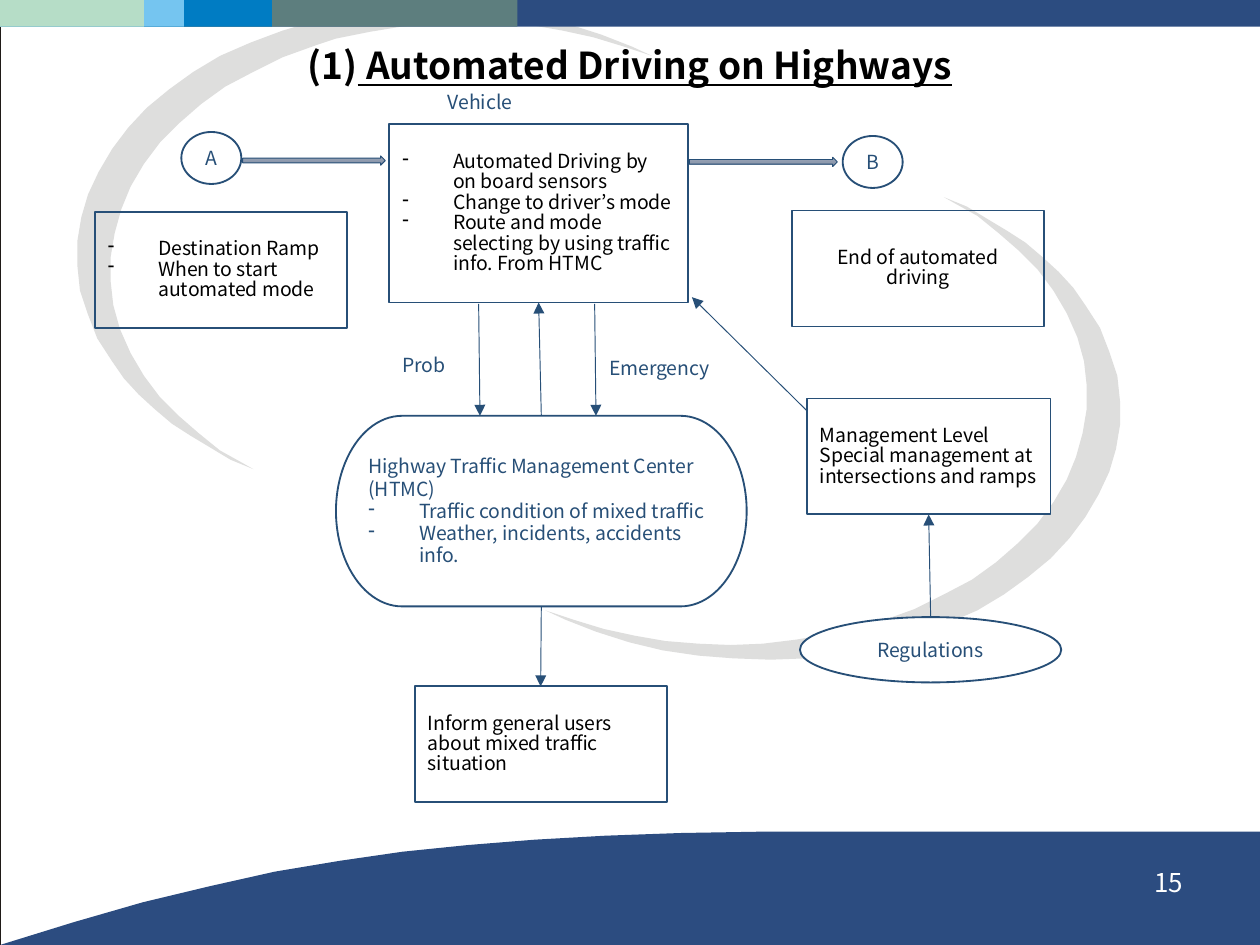
from lxml.etree import SubElement
from pptx import Presentation
from pptx.dml.color import RGBColor
from pptx.enum.shapes import MSO_CONNECTOR, MSO_SHAPE
from pptx.enum.text import MSO_ANCHOR, PP_ALIGN
from pptx.oxml.ns import qn
from pptx.util import Inches, Pt

FONT = "Noto Sans CJK JP"
NAVY, BLUE, GREY = "2C4C80", "274F77", "DEDEDD"
BLACK, WHITE = "000000", "FFFFFF"
WIDTH, HEIGHT = 9.45, 7.09

TOP_BANDS = [(9.45, NAVY), (3.88, "5D7E7E"), (2.04, "007CC3"), (1.38, "75C5F0"), (1.08, "B6DDC7")]
SWOOSH = [
    (2.12, 0.23), (2.39, 0.15), (2.66, 0.1), (2.93, 0.06), (3.2, 0.05), (3.48, 0.06),
    (3.74, 0.08), (4.01, 0.12), (4.26, 0.18), (4.51, 0.26), (4.74, 0.35), (4.89, 0.42),
    (4.68, 0.35), (4.45, 0.28), (4.22, 0.23), (3.99, 0.19), (3.74, 0.17), (3.5, 0.16),
    (3.26, 0.17), (3.01, 0.2), (2.77, 0.24), (2.52, 0.29), (2.37, 0.34), (2.12, 0.43),
    (1.9, 0.54), (1.69, 0.65), (1.51, 0.78), (1.35, 0.92), (1.2, 1.07), (1.08, 1.23),
    (0.98, 1.4), (0.91, 1.57), (0.86, 1.75), (0.83, 1.93), (0.83, 2.11), (0.85, 2.29),
    (0.9, 2.47), (0.98, 2.65), (1.08, 2.82), (1.2, 2.98), (1.34, 3.12), (1.49, 3.25),
    (1.65, 3.38), (1.83, 3.48), (1.9, 3.52), (1.73, 3.45), (1.58, 3.36), (1.43, 3.27),
    (1.29, 3.18), (1.16, 3.07), (1.04, 2.96), (0.93, 2.84), (0.84, 2.71), (0.73, 2.54),
    (0.66, 2.36), (0.6, 2.18), (0.58, 1.99), (0.58, 1.81), (0.61, 1.63), (0.66, 1.46),
    (0.74, 1.29), (0.84, 1.12), (0.96, 0.96), (1.1, 0.81), (1.27, 0.67), (1.45, 0.54),
    (1.65, 0.42), (1.88, 0.32),
]
WAVE = [
    (9.46, 0), (9.46, 0.85), (0, 0.85), (0.55, 0.68), (1.07, 0.53), (1.57, 0.41),
    (2.06, 0.3), (2.54, 0.22), (3.02, 0.15), (3.51, 0.1), (4.01, 0.06), (4.54, 0.03),
    (5.1, 0.01), (5.69, 0),
]


def color(value):
    return RGBColor.from_string(value)


def paint(shape, fill=None, line=None, line_width=1):
    shape.shadow.inherit = False
    if fill:
        shape.fill.solid()
        shape.fill.fore_color.rgb = color(fill)
    else:
        shape.fill.background()
    if line:
        shape.line.color.rgb = color(line)
        shape.line.width = Pt(line_width)
    else:
        shape.line.fill.background()


def write(paragraph, text, size=10.5, ink=BLACK, bold=False, underline=False):
    run = paragraph.add_run()
    run.text = text
    run.font.name = FONT
    run.font.size = Pt(size)
    run.font.color.rgb = color(ink)
    run.font.bold = bold
    run.font.underline = underline


def add_bullet(paragraph):
    properties = paragraph._p.get_or_add_pPr()
    properties.set("marL", str(Inches(0.38)))
    properties.set("indent", str(-Inches(0.38)))
    SubElement(properties, qn("a:buChar"), char="-")


def write_lines(shape, lines, align=PP_ALIGN.LEFT, spacing=None, bullets_from=None, **text_format):
    frame = shape.text_frame
    frame.word_wrap = True
    for index, line in enumerate(lines):
        paragraph = frame.add_paragraph() if index else frame.paragraphs[0]
        paragraph.alignment = align
        if spacing:
            paragraph.line_spacing = Pt(spacing)
        if bullets_from is not None and index >= bullets_from:
            add_bullet(paragraph)
        write(paragraph, line, **text_format)


def add_outline(slide, points, left, top, fill, direction=1):
    placed = [(Inches(left + direction * x), Inches(top + direction * y)) for x, y in points]
    builder = slide.shapes.build_freeform(*placed[0], scale=1.0)
    builder.add_line_segments(placed[1:], close=True)
    paint(builder.convert_to_shape(), fill)


def add_preset(slide, preset, left, top, width, height, **look):
    shape = slide.shapes.add_shape(preset, *map(Inches, (left, top, width, height)))
    paint(shape, **look)
    return shape


def add_node(slide, preset, box, lines, fill=None, **text_format):
    shape = add_preset(slide, preset, *box, fill=fill, line=BLUE)
    shape.text_frame.vertical_anchor = MSO_ANCHOR.MIDDLE
    write_lines(shape, lines, **text_format)
    return shape


def add_label(slide, left, top, width, height, text, **text_format):
    box = slide.shapes.add_textbox(*map(Inches, (left, top, width, height)))
    write_lines(box, [text], **text_format)


def add_arrow(slide, start=(0, 0), end=(0, 0), source=None, target=None):
    connector = slide.shapes.add_connector(MSO_CONNECTOR.STRAIGHT, *map(Inches, (*start, *end)))
    if source:
        connector.begin_connect(*source)
    if target:
        connector.end_connect(*target)
    connector.line.color.rgb = color(BLUE)
    connector.line.width = Pt(0.5)
    SubElement(connector.line._get_or_add_ln(), qn("a:tailEnd"), type="triangle")
    SubElement(connector._element.spPr, qn("a:effectLst"))


def add_block_arrow(slide, left, top, width, height):
    arrow = add_preset(slide, MSO_SHAPE.RIGHT_ARROW, left, top, width, height, line=BLUE, line_width=0.5)
    arrow.fill.gradient()
    arrow.fill.gradient_angle = 270
    for stop, tone in zip(arrow.fill.gradient_stops, ("9FA9B9", "7F8CA3")):
        stop.color.rgb = color(tone)


def draw_background(slide, left, top, width, height):
    add_preset(slide, MSO_SHAPE.RECTANGLE, left, top, width, height, line="1F1A17", line_width=0.13)
    add_outline(slide, SWOOSH, left, top, GREY)
    add_outline(slide, SWOOSH, left + 8.98, top + 5, GREY, direction=-1)
    for band_width, fill in TOP_BANDS:
        add_preset(slide, MSO_SHAPE.RECTANGLE, left, top, band_width, 0.2, fill=fill)
    add_outline(slide, WAVE, left, top + 6.24, NAVY)


def draw_title(slide, left, top, width, height):
    title = slide.shapes.title
    title.left, title.top, title.width, title.height = map(Inches, (left, top, width, height))
    title.text_frame.vertical_anchor = MSO_ANCHOR.MIDDLE
    write_lines(title, ["(1)"], align=PP_ALIGN.CENTER, size=20, bold=True)
    write(title.text_frame.paragraphs[0], " Automated Driving on Highways", size=20, bold=True, underline=True)
    title.element.getparent().append(title.element)


def draw_route(slide, left, top):
    center = {"align": PP_ALIGN.CENTER}
    rectangle = MSO_SHAPE.RECTANGLE
    vehicle = add_node(slide, rectangle, (left + 2.21, top + 0.3, 2.24, 1.34), [
        "Automated Driving by on board sensors",
        "Change to driver’s mode",
        "Route and mode selecting by using traffic info. From HTMC",
    ], spacing=11, bullets_from=0)
    add_node(slide, MSO_SHAPE.OVAL, (left + 0.65, top + 0.36, 0.45, 0.39), ["A"], WHITE, ink=BLUE, **center)
    add_node(slide, MSO_SHAPE.OVAL, (left + 5.61, top + 0.39, 0.45, 0.39), ["B"], WHITE, ink=BLUE, **center)
    add_node(slide, rectangle, (left, top + 0.96, 1.89, 0.87),
             ["Destination Ramp", "When to start automated mode"], spacing=11, bullets_from=0)
    add_node(slide, rectangle, (left + 5.23, top + 0.95, 1.89, 0.87),
             ["End of automated driving"], spacing=11, **center)
    add_block_arrow(slide, left + 1.11, top + 0.54, 1.07, 0.07)
    add_block_arrow(slide, left + 4.46, top + 0.55, 1.11, 0.07)
    add_label(slide, left + 2.55, top, 0.96, 0.37, "Vehicle", ink=BLUE)
    return vehicle


def draw_management(slide, left, top, vehicle):
    center = add_node(slide, MSO_SHAPE.FLOWCHART_TERMINATOR, (left, top + 0.52, 3.08, 1.43), [
        "Highway Traffic Management Center (HTMC)",
        "Traffic condition of mixed traffic",
        "Weather, incidents, accidents info.",
    ], WHITE, spacing=12, bullets_from=1, ink=BLUE)
    level = add_node(slide, MSO_SHAPE.RECTANGLE, (left + 3.53, top + 0.39, 1.83, 0.87),
                     ["Management Level", "Special management at intersections and ramps"], WHITE, spacing=11)
    regulations = add_node(slide, MSO_SHAPE.OVAL, (left + 3.48, top + 2.03, 1.96, 0.49),
                           ["Regulations"], WHITE, align=PP_ALIGN.CENTER, ink=BLUE)
    users = add_node(slide, MSO_SHAPE.RECTANGLE, (left + 0.59, top + 2.55, 1.89, 0.87),
                     ["Inform general users about mixed traffic situation"], spacing=11)
    add_label(slide, left + 0.4, top, 0.96, 0.37, "Prob", ink=BLUE)
    add_label(slide, left + 1.95, top + 0.02, 1.21, 0.37, "Emergency", ink=BLUE)
    for offset in (1.07, 1.94):
        add_arrow(slide, (left + offset, top - 0.32), (left + offset + 0.01, top + 0.52))
    add_arrow(slide, (left + 3.53, top + 0.48), (left + 2.67, top - 0.37))
    add_arrow(slide, source=(center, 0), target=(vehicle, 2))
    add_arrow(slide, source=(regulations, 0), target=(level, 2))
    add_arrow(slide, source=(center, 2), target=(users, 0))


def main():
    presentation = Presentation()
    presentation.slide_width = Inches(WIDTH)
    presentation.slide_height = Inches(HEIGHT)
    slide = presentation.slides.add_slide(presentation.slide_layouts[5])
    draw_background(slide, 0, 0, WIDTH, HEIGHT)
    draw_title(slide, 0.47, 0.19, 8.51, 0.59)
    vehicle = draw_route(slide, 0.71, 0.63)
    draw_management(slide, 2.52, 2.6, vehicle)
    add_label(slide, 6.77, 6.45, 2.2, 0.49, "15", align=PP_ALIGN.RIGHT, size=14, ink=WHITE)
    presentation.save("out.pptx")


if __name__ == "__main__":
    main()
